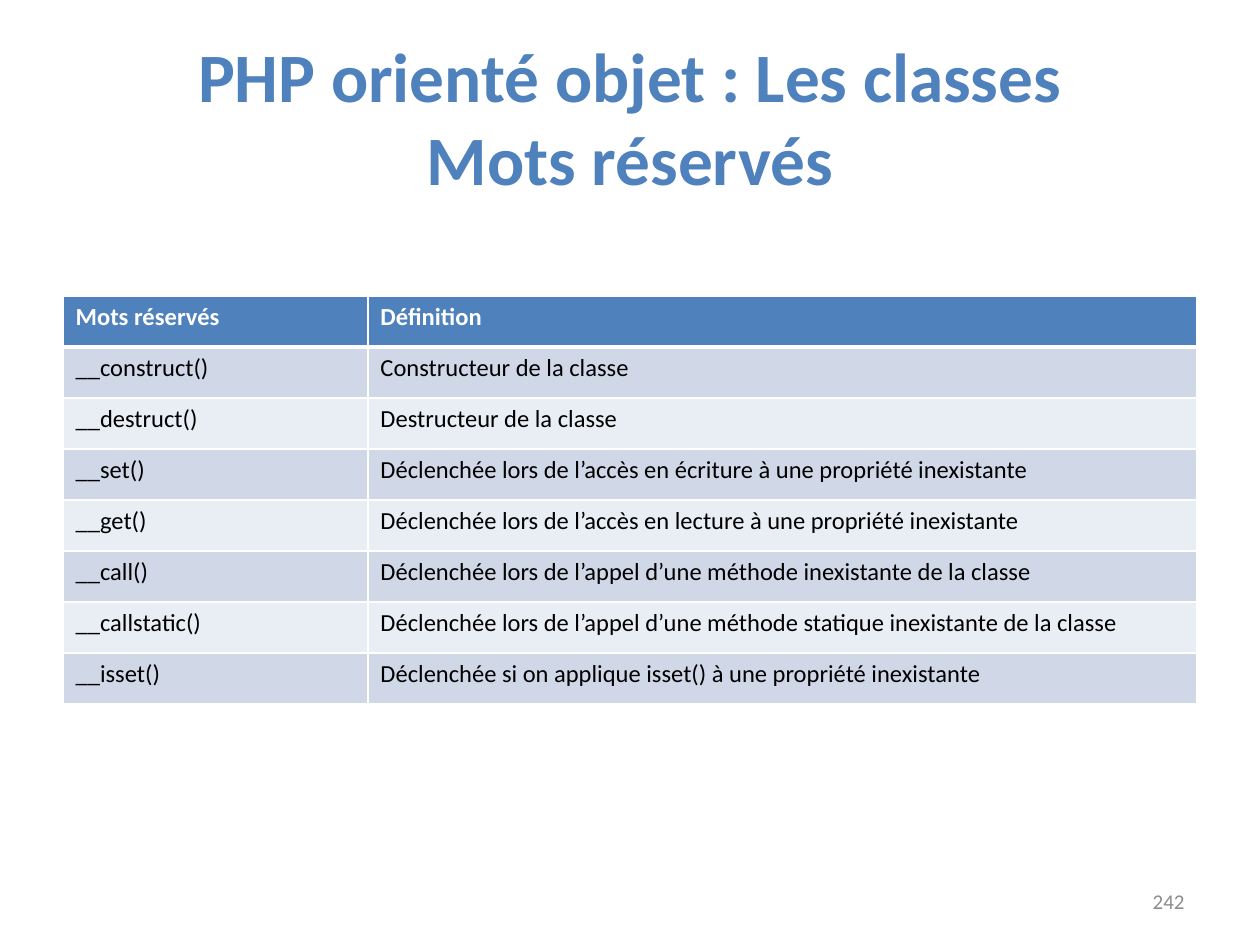
import lxml.etree
import pptx
import pptx.dml.color
import pptx.enum.text
import pptx.oxml.ns
import pptx.util

BLUE = pptx.dml.color.RGBColor(0x4F, 0x81, 0xBD)
DARK_BAND = pptx.dml.color.RGBColor(0xD0, 0xD8, 0xE8)
LIGHT_BAND = pptx.dml.color.RGBColor(0xE9, 0xED, 0xF4)
WHITE = pptx.dml.color.RGBColor(0xFF, 0xFF, 0xFF)
BLACK = pptx.dml.color.RGBColor(0x00, 0x00, 0x00)
GREY = pptx.dml.color.RGBColor(0x8C, 0x8C, 0x8C)

ALIGN = pptx.enum.text.PP_ALIGN

RESERVED_WORDS = [
    ("Mots réservés", "Définition"),
    ("__construct()", "Constructeur de la classe"),
    ("__destruct()", "Destructeur de la classe"),
    ("__set()", "Déclenchée lors de l’accès en écriture à une propriété inexistante"),
    ("__get()", "Déclenchée lors de l’accès en lecture à une propriété inexistante"),
    ("__call()", "Déclenchée lors de l’appel d’une méthode inexistante de la classe"),
    ("__callstatic()", "Déclenchée lors de l’appel d’une méthode statique inexistante de la classe"),
    ("__isset()", "Déclenchée si on applique isset() à une propriété inexistante"),
]


class SlideBuilder:
    """Draws on one slide; lengths are units of a grid of 100 columns by 75 rows."""

    font_name = "Calibri"
    unit = pptx.util.Inches(0.1)

    def __init__(self, slide):
        self.slide = slide

    def lengths(self, *units):
        return [round(self.unit * value) for value in units]

    def style_font(self, paragraph, size, color, bold=False):
        font = paragraph.font
        font.name = self.font_name
        font.size = pptx.util.Pt(size)
        font.bold = bold
        font.color.rgb = color

    def text(self, box, content, size, color, alignment, bold=False):
        frame = self.slide.shapes.add_textbox(*self.lengths(*box)).text_frame
        frame.word_wrap = True
        frame.vertical_anchor = pptx.enum.text.MSO_ANCHOR.MIDDLE
        paragraph = frame.paragraphs[0]
        paragraph.text = content
        paragraph.alignment = alignment
        self.style_font(paragraph, size, color, bold)

    def border(self, cell, side, width):
        """Draw a white line on one side (L, R, T or B) of a cell."""
        qualified = pptx.oxml.ns.qn
        properties = cell._tc.get_or_add_tcPr()
        line = lxml.etree.SubElement(
            properties, qualified(f"a:ln{side}"), w=str(pptx.util.Pt(width)))
        fill = lxml.etree.SubElement(line, qualified("a:solidFill"))
        lxml.etree.SubElement(fill, qualified("a:srgbClr"), val=str(WHITE))

    def table(self, box, column_widths, rows, size):
        frame = self.slide.shapes.add_table(
            len(rows), len(column_widths), *self.lengths(*box))
        table = frame.table
        for column, width in zip(table.columns, self.lengths(*column_widths)):
            column.width = width
        for row_index, row in enumerate(rows):
            is_header = row_index == 0
            band = DARK_BAND if row_index % 2 else LIGHT_BAND
            widths = {"L": 1, "R": 1,
                      "T": 3 if row_index == 1 else 1,
                      "B": 3 if is_header else 1}
            for column_index, content in enumerate(row):
                cell = table.cell(row_index, column_index)
                for side, width in widths.items():
                    self.border(cell, side, width)
                cell.fill.solid()
                cell.fill.fore_color.rgb = BLUE if is_header else band
                cell.text = content
                self.style_font(cell.text_frame.paragraphs[0], size,
                                WHITE if is_header else BLACK, is_header)


def main():
    presentation = pptx.Presentation()
    presentation.slide_width = pptx.util.Inches(10)
    presentation.slide_height = pptx.util.Inches(7.5)
    builder = SlideBuilder(
        presentation.slides.add_slide(presentation.slide_layouts[6]))
    builder.text((5, 3, 90, 12.5), "PHP orienté objet : Les classes\vMots réservés",
                 39.6, BLUE, ALIGN.CENTER, bold=True)
    builder.table((5, 23.5, 90, 32.4), (24.2, 65.8), RESERVED_WORDS, 14)
    builder.text((71.7, 69.5, 23.3, 4), "242", 12, GREY, ALIGN.RIGHT)
    presentation.save("out.pptx")


if __name__ == "__main__":
    main()
